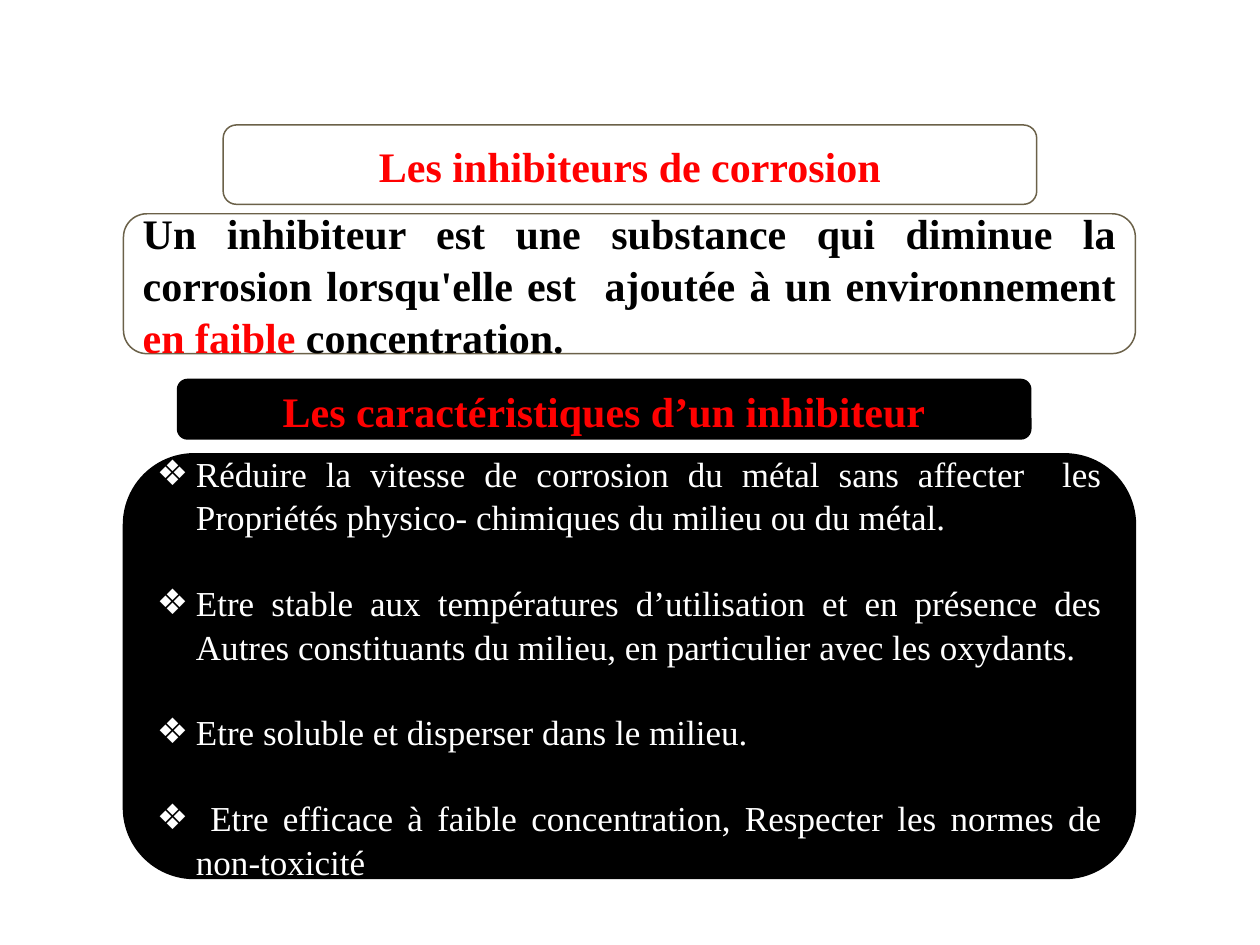
from lxml import etree
from pptx import Presentation
from pptx.dml.color import RGBColor
from pptx.enum.shapes import MSO_SHAPE
from pptx.enum.text import MSO_ANCHOR, MSO_AUTO_SIZE, PP_ALIGN
from pptx.oxml.ns import qn
from pptx.util import Cm, Pt

ROUNDED = MSO_SHAPE.ROUNDED_RECTANGLE
MIDDLE = MSO_ANCHOR.MIDDLE
NO_FIT = MSO_AUTO_SIZE.NONE
CENTER, JUSTIFY = PP_ALIGN.CENTER, PP_ALIGN.JUSTIFY
COLORS = {"white": "FFFFFF", "black": "000000", "red": "FF0000", "olive": "6B6149"}
FONT = "Times New Roman"


def rgb(name):
    return RGBColor.from_string(COLORS[name])


def write(tf, paragraphs, size=24, bold=True, align=CENTER, bullet=None, gap=0, inset=0.25):
    """Fill a text frame; each paragraph is a list of (text, colour) runs."""
    tf.word_wrap = True
    tf.auto_size = NO_FIT
    tf.vertical_anchor = MIDDLE
    tf.margin_left = tf.margin_right = Cm(inset)
    tf.margin_top = tf.margin_bottom = Cm(0.13)
    for i, runs in enumerate(paragraphs):
        p = tf.add_paragraph() if i else tf.paragraphs[0]
        p.alignment = align
        p.line_spacing = 1.04
        p.space_before = Pt(gap if i else 0)
        if bullet:
            pPr = p._p.get_or_add_pPr()
            pPr.set("marL", str(Cm(0.79)))
            pPr.set("indent", str(-Cm(0.79)))
            etree.SubElement(pPr, qn("a:buChar")).set("char", bullet)
        for text, color in runs:
            r = p.add_run()
            r.text = text
            r.font.name = FONT
            r.font.size = Pt(size)
            r.font.bold = bold
            r.font.color.rgb = rgb(color)


prs = Presentation()
prs.slide_width, prs.slide_height = Cm(25.4), Cm(19.05)
s = prs.slides.add_slide(prs.slide_layouts[1])

# Rounded panels: left, top, width, height, fill, line
PANELS = {
    "title": (4.5, 2.52, 16.4, 1.6, "white", "olive"),
    "definition": (2.49, 4.31, 20.4, 2.82, "white", "olive"),
    "heading": (3.58, 7.65, 17.2, 1.2, "black", "black"),
    "list": (2.49, 9.15, 20.4, 8.56, "black", "black"),
}
panels = {}
for name, (x, y, w, h, fill, line) in PANELS.items():
    sp = s.shapes.add_shape(ROUNDED, Cm(x), Cm(y), Cm(w), Cm(h))
    sp.shadow.inherit = False
    sp.fill.solid()
    sp.fill.fore_color.rgb = rgb(fill)
    sp.line.color.rgb = rgb(line)
    sp.line.width = Pt(0.85)
    panels[name] = sp

# Title and list placeholders lie on top of their panels
title, body = s.shapes.title, s.placeholders[1]
for sp, name in ((title, "title"), (body, "list")):
    panel = panels[name]
    sp.left, sp.top, sp.width, sp.height = panel.left, panel.top, panel.width, panel.height
    s.shapes._spTree.append(sp._element)

write(title.text_frame, [[("Les inhibiteurs de corrosion", "red")]])

# Definition and second heading
write(panels["definition"].text_frame, [[
    ("Un inhibiteur est une substance qui diminue la corrosion lorsqu'elle est  "
     "ajoutée à un environnement ", "black"),
    ("en faible ", "red"),
    ("concentration.", "black"),
]], align=JUSTIFY)
write(panels["heading"].text_frame, [[("Les caractéristiques d’un inhibiteur", "red")]])

# Characteristics, one empty line apart
items = [
    "Réduire la vitesse de corrosion du métal sans affecter  les "
    "Propriétés physico- chimiques du milieu ou du métal.",
    "Etre stable aux températures d’utilisation et en présence des "
    "Autres constituants du milieu, en particulier avec les oxydants.",
    "Etre soluble et disperser dans le milieu.",
    " Etre efficace à faible concentration, Respecter les normes de non-toxicité",
]
write(body.text_frame, [[(item, "white")] for item in items],
      size=20, bold=False, align=JUSTIFY, bullet="❖", gap=24, inset=0.67)
# The bullets take the colour of the text
prs.save("out.pptx")
